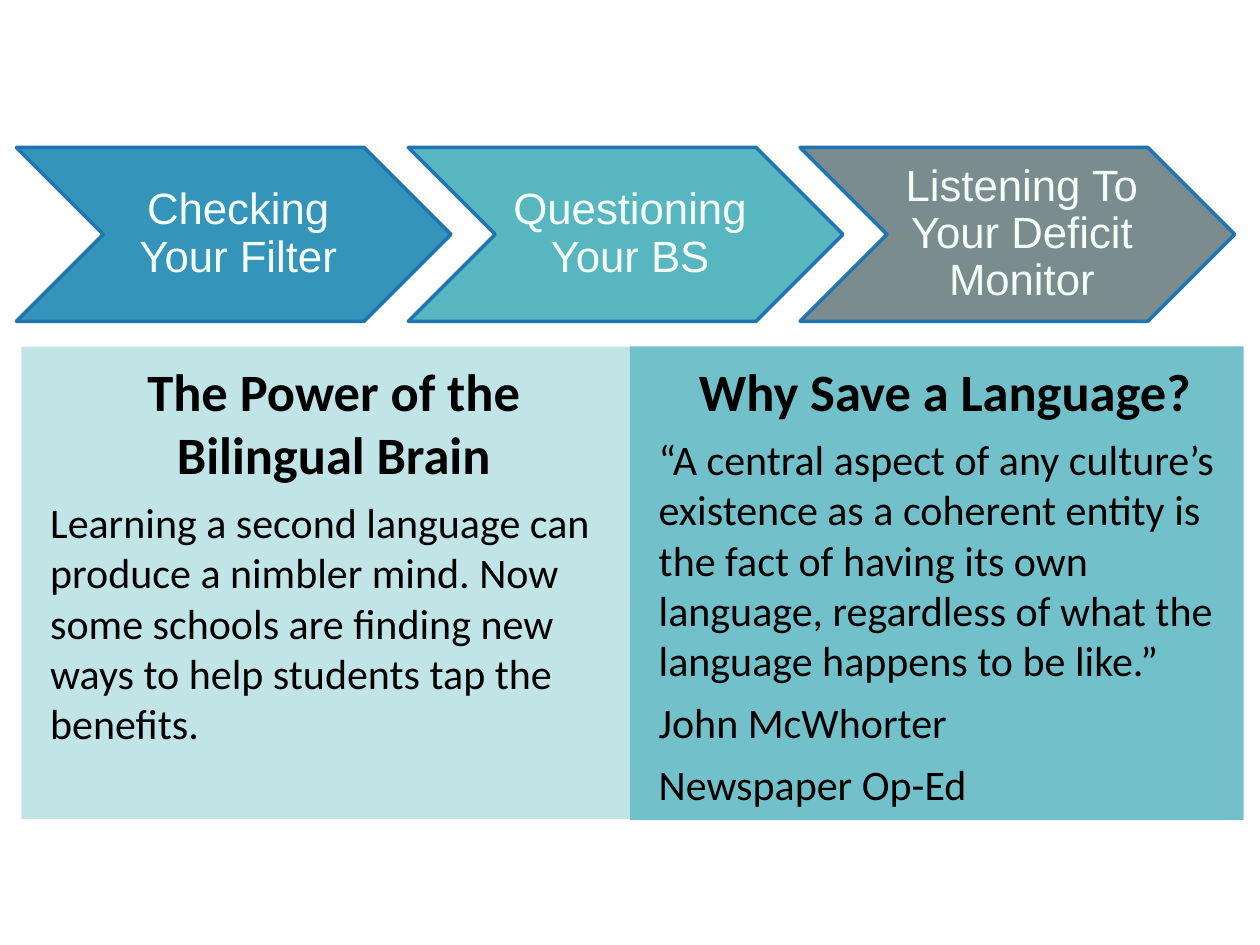
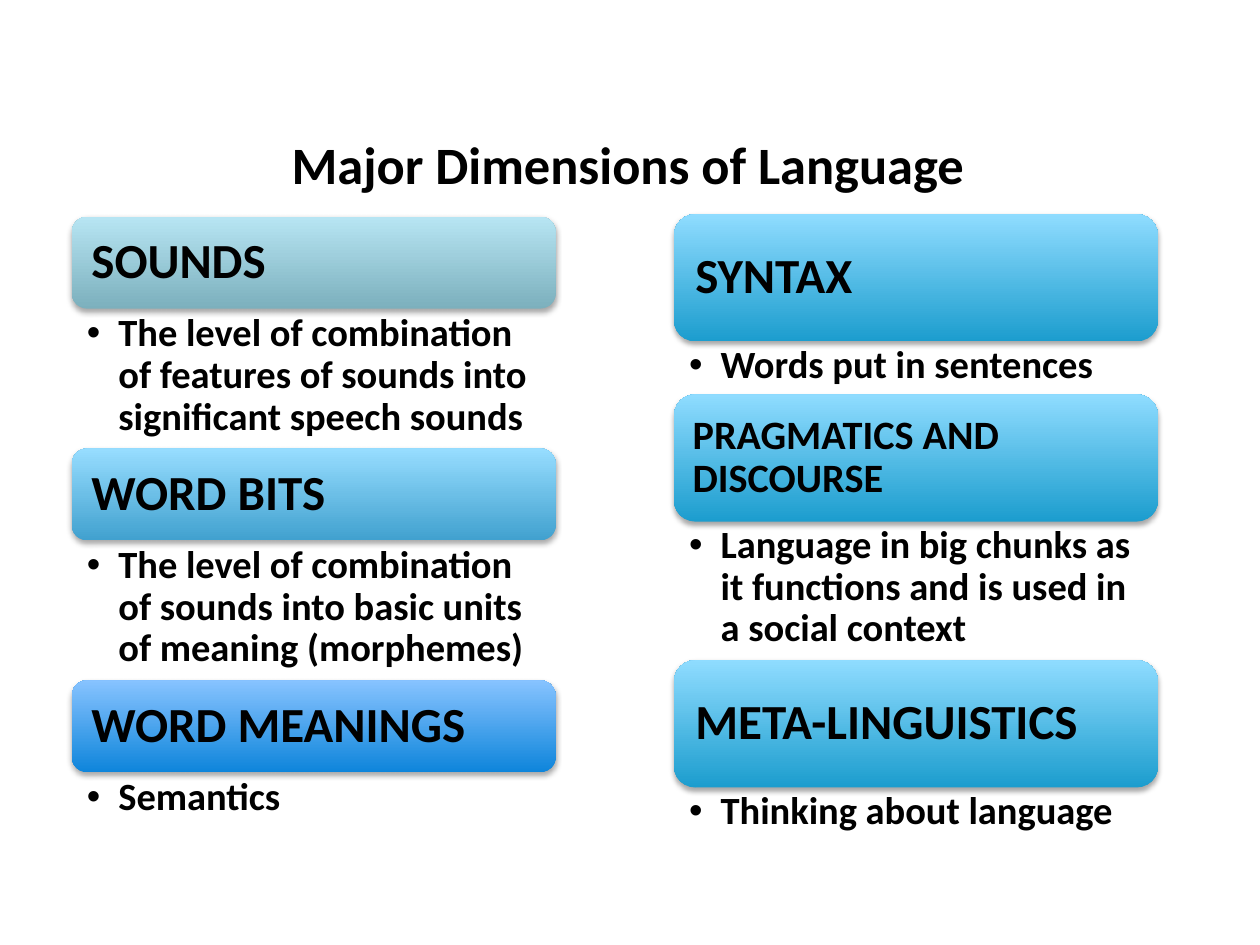
from lxml import etree
from pptx import Presentation
from pptx.dml.color import RGBColor
from pptx.enum import shapes, text
from pptx.oxml import ns
from pptx.util import Inches, Pt

BLACK, TEAL = "000000", "58B6C0"
CHEVRON_EDGE, CHEVRON_TEXT = "2074B1", "F4FFF8"
SKY = ("1C9DCE", "8FDCFF")
BODY_FONT, CHEVRON_FONT = "Calibri", "Arial"
HEADING_SIZE = 30
TITLE_ONLY, BLANK = 5, 6


def rgb(hex_colour):
    return RGBColor.from_string(hex_colour)


def sub(parent, tag, **attributes):
    """Append a DrawingML element."""
    values = {name: str(value) for name, value in attributes.items()}
    return etree.SubElement(parent, ns.qn("a:" + tag), values)


def set_frame(shape, insets, anchor=text.MSO_ANCHOR.TOP):
    """Wrap the text; insets are left, top, right and bottom in inches."""
    frame = shape.text_frame
    frame.word_wrap = True
    frame.auto_size = text.MSO_AUTO_SIZE.NONE
    frame.vertical_anchor = anchor
    (frame.margin_left, frame.margin_top,
     frame.margin_right, frame.margin_bottom) = map(Inches, insets)
    return frame


def write(frame, words, size, font=BODY_FONT, colour=BLACK, bold=False,
          align=text.PP_ALIGN.LEFT, spacing=None, before=0, indent=0, bullet=False):
    """Fill the first paragraph, or add one after those already written."""
    paragraph = frame.add_paragraph() if frame.text else frame.paragraphs[0]
    properties = paragraph._p.get_or_add_pPr()
    properties.set("marL", str(Inches(indent)))
    properties.set("indent", str(-Inches(indent) if bullet else 0))
    if bullet:
        sub(properties, "buFont", typeface="Arial")
        sub(properties, "buChar", char="•")
    paragraph.alignment = align
    paragraph.space_before = Pt(before)
    if spacing:
        paragraph.line_spacing = spacing
    run = paragraph.add_run()
    run.text = words
    run.font.size = Pt(size)
    run.font.name = font
    run.font.bold = bold
    run.font.color.rgb = rgb(colour)


def add_block(parent, kind, left, top, width, height):
    block = parent.shapes.add_shape(kind, *map(Inches, (left, top, width, height)))
    block.shadow.inherit = False
    block.line.fill.background()
    return block


def chevron_row(slide, left, top, step, steps):
    for index, (words, colour) in enumerate(steps):
        chevron = add_block(slide, shapes.MSO_SHAPE.CHEVRON,
                            left + index * step, top, 3.45, 1.38)
        chevron.fill.solid()
        chevron.fill.fore_color.rgb = rgb(colour)
        chevron.line.color.rgb = rgb(CHEVRON_EDGE)
        chevron.line.width = Pt(2)
        frame = set_frame(chevron, (0.11, 0.04, 0.04, 0.04), text.MSO_ANCHOR.MIDDLE)
        write(frame, words, 25, font=CHEVRON_FONT, colour=CHEVRON_TEXT,
              align=text.PP_ALIGN.CENTER, spacing=0.9)


def reading_panel(slide, box, opacity, heading, passages):
    panel = add_block(slide, shapes.MSO_SHAPE.RECTANGLE, *box)
    panel.fill.solid()
    panel.fill.fore_color.rgb = rgb(TEAL)
    tint = panel._element.spPr.find(".//" + ns.qn("a:srgbClr"))
    sub(tint, "alpha", val=opacity * 1000)
    frame = set_frame(panel, (0.1,) * 4)
    write(frame, heading, HEADING_SIZE, bold=True,
          align=text.PP_ALIGN.CENTER, indent=0.13)
    for passage in passages:
        write(frame, passage, 24, before=6.4, indent=0.13)


def heading_card(group, box, term, size, gradient):
    card = add_block(group, shapes.MSO_SHAPE.ROUNDED_RECTANGLE, *box)
    card.fill.gradient()
    card.fill.gradient_angle = 90
    for stop, colour in zip(card.fill.gradient_stops, gradient):
        stop.color.rgb = rgb(colour)
    effects = card._element.spPr.find(ns.qn("a:effectLst"))
    shadow = sub(effects, "outerShdw", blurRad=Pt(3.1), dist=Pt(1.8),
                 dir=90 * 60000, rotWithShape=0)
    sub(sub(shadow, "srgbClr", val=BLACK), "alpha", val=35000)
    inset = 0.12 if size > 25 else 0.1
    frame = set_frame(card, (inset,) * 4, text.MSO_ANCHOR.MIDDLE)
    write(frame, term, size, bold=True, spacing=0.9)


def dimension_column(slide, left, top, card_height, insets, dimensions):
    """Stack cards, each followed by its bulleted meaning."""
    group = slide.shapes.add_group_shape()
    width = 3.84
    for term, size, gradient, meaning, meaning_height in dimensions:
        heading_card(group, (left, top, width, card_height), term, size, gradient)
        top += card_height
        note = group.shapes.add_textbox(*map(Inches, (left, top, width, meaning_height)))
        write(set_frame(note, insets), meaning, 22, bold=True,
              spacing=0.9, indent=0.25, bullet=True)
        top += meaning_height


def bilingual_slide(deck):
    slide = deck.slides.add_slide(deck.slide_layouts[BLANK])
    reading_panel(slide, (0.17, 2.75, 4.83, 3.75), 37, "The Power of the Bilingual Brain", [
        "Learning a second language can produce a nimbler mind. Now some schools "
        "are finding new ways to help students tap the benefits."])
    reading_panel(slide, (5, 2.75, 4.87, 3.76), 84, "Why Save a Language?", [
        "“A central aspect of any culture’s existence as a coherent entity is the fact of "
        "having its own language, regardless of what the language happens to be like.”",
        "John McWhorter",
        "Newspaper Op-Ed"])
    chevron_row(slide, 0.13, 1.17, 3.11, [
        ("Checking Your Filter", "3494BA"),
        ("Questioning Your BS", TEAL),
        ("Listening To Your Deficit Monitor", "7A8C8E")])


def dimensions_slide(deck):
    slide = deck.slides.add_slide(deck.slide_layouts[TITLE_ONLY])
    title = slide.shapes.title
    title.left, title.top, title.width, title.height = map(Inches, (1.11, 1, 7.75, 0.61))
    write(set_frame(title, (0.1, 0.05, 0.1, 0.05)), "Major Dimensions of Language",
          HEADING_SIZE, bold=True, align=text.PP_ALIGN.CENTER)
    dimension_column(slide, 0.57, 1.72, 0.73, (0.12, 0.04, 0.22, 0.04), [
        ("SOUNDS", 28, ("7CB0BD", "B7E5F3"),
         "The level of combination of features of sounds into significant speech sounds", 1.11),
        ("WORD BITS", 28, ("41A1CF", "97DDFF"),
         "The level of combination of sounds into basic units of meaning (morphemes)", 1.11),
        ("WORD MEANINGS", 28, ("0E85DB", "87C3FF"), "Semantics", 0.51)])
    dimension_column(slide, 5.35, 1.7, 1.01, (0.12, 0.03, 0.17, 0.03), [
        ("SYNTAX", 28, SKY, "Words put in sentences", 0.42),
        ("PRAGMATICS AND DISCOURSE", 23, SKY,
         "Language in big chunks as it functions and is used in a social context", 1.1),
        ("META-LINGUISTICS", 28, SKY, "Thinking about language", 0.42)])


def main():
    deck = Presentation()
    deck.slide_width, deck.slide_height = Inches(10), Inches(7.5)
    bilingual_slide(deck)
    dimensions_slide(deck)
    deck.save("out.pptx")


if __name__ == "__main__":
    main()
